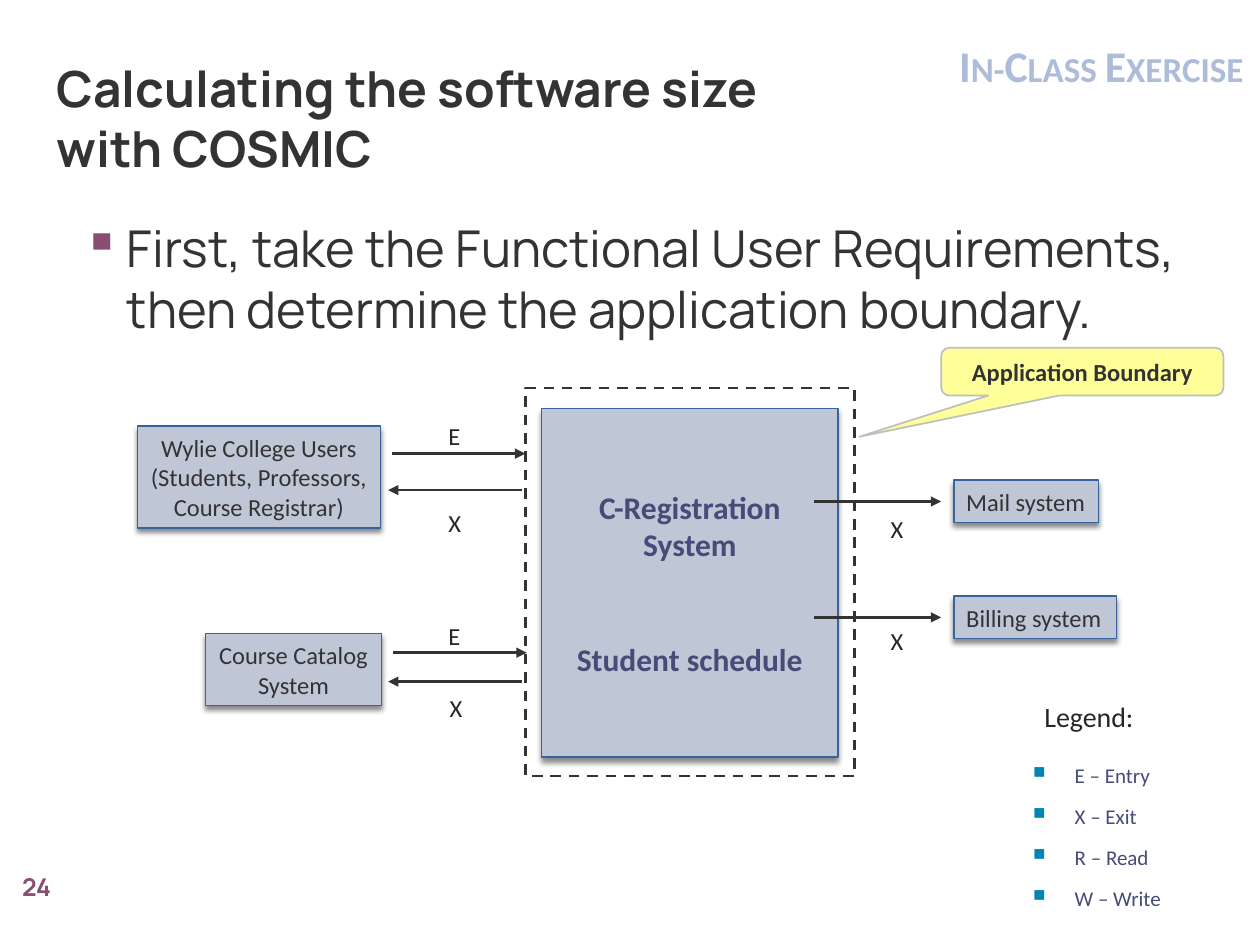
from dataclasses import dataclass

from lxml import etree
from pptx import Presentation, util as u
from pptx.dml.color import RGBColor
from pptx.enum import dml, shapes, text
from pptx.oxml import ns

PX = 9144
CENTER, LEFT, RIGHT = text.PP_ALIGN.CENTER, text.PP_ALIGN.LEFT, text.PP_ALIGN.RIGHT
MIDDLE, TOP = text.MSO_ANCHOR.MIDDLE, text.MSO_ANCHOR.TOP


@dataclass(frozen=True)
class Theme:
    heading: str = "Manrope"
    plain: str = "Calibri"
    ink: str = "333333"
    dark: str = "262626"
    plum: str = "884D72"
    indigo: str = "474B78"
    sky: str = "ADBCDB"
    teal: str = "0084B4"
    panel: str = "BFC6D5"
    edge: str = "39639D"
    yellow: str = "FFFF99"
    silver: str = "BFBFBF"
    title: float = 28.4
    body: float = 29
    banner: float = 25
    system: float = 18
    legend: float = 16
    label: float = 14
    item: float = 12


def px(*values):
    return [u.Emu(value * PX) for value in values]


def child(parent, tag, **attributes):
    return etree.SubElement(parent, ns.qn(tag), {key: str(value) for key, value in attributes.items()})


class Painter:
    def __init__(self, page, theme):
        self.page, self.theme = page, theme

    def set_words(self, shape, words, size, color, font=None, bold=False, align=LEFT,
                  anchor=TOP, wrap=False, grow=False):
        frame = shape.text_frame
        frame.text = words
        frame.word_wrap = wrap
        frame.vertical_anchor = anchor
        frame.auto_size = text.MSO_AUTO_SIZE.SHAPE_TO_FIT_TEXT if grow else text.MSO_AUTO_SIZE.NONE
        for para in frame.paragraphs:
            para.alignment = align
            for span in para.runs:
                span.font.name = font or self.theme.plain
                span.font.size = u.Pt(size)
                span.font.bold = bold
                span.font.color.rgb = RGBColor.from_string(color)
        return frame

    def label(self, at, words, size, color, **style):
        return self.set_words(self.page.shapes.add_textbox(*px(*at)), words, size, color, **style)

    def bullets(self, frame, mark, color, indent, percent=100, gap=0):
        for index, para in enumerate(frame.paragraphs):
            if index:
                para.space_before = u.Pt(gap)
            properties = para._p.get_or_add_pPr()
            properties.set("marL", str(indent * PX))
            properties.set("indent", str(-indent * PX))
            child(child(properties, "a:buClr"), "a:srgbClr", val=color)
            child(properties, "a:buSzPct", val=percent * 1000)
            child(properties, "a:buChar", char=mark)

    def shape(self, kind, at, fill, line, width):
        shape = self.page.shapes.add_shape(kind, *px(*at))
        shape.shadow.inherit = False
        if fill:
            shape.fill.solid()
            shape.fill.fore_color.rgb = RGBColor.from_string(fill)
        else:
            shape.fill.background()
        shape.line.color.rgb = RGBColor.from_string(line)
        shape.line.width = u.Pt(width)
        return shape

    def system(self, at, words, size, color, **style):
        box = self.shape(shapes.MSO_SHAPE.RECTANGLE, at, self.theme.panel, self.theme.edge, 0.79)
        effects = box._element.spPr.find(ns.qn("a:effectLst"))
        shadow = child(effects, "a:outerShdw", blurRad=u.Pt(3), dist=u.Pt(2.4),
                       dir=5400000, rotWithShape=0)
        child(child(shadow, "a:srgbClr", val="000000"), "a:alpha", val=45000)
        return self.set_words(box, words, size, color, anchor=MIDDLE, **style)

    def boundary(self, at):
        box = self.shape(shapes.MSO_SHAPE.RECTANGLE, at, None, self.theme.ink, 1.5)
        box.line.dash_style = dml.MSO_LINE.DASH

    def callout(self, at, words, adjustments):
        box = self.shape(shapes.MSO_SHAPE.ROUNDED_RECTANGULAR_CALLOUT, at,
                         self.theme.yellow, self.theme.silver, 1)
        for index, value in enumerate(adjustments):
            box.adjustments[index] = value
        self.set_words(box, words, self.theme.label, self.theme.ink, bold=True,
                       align=CENTER, anchor=MIDDLE)

    def arrow(self, start, end, y):
        line = self.page.shapes.add_connector(shapes.MSO_CONNECTOR.STRAIGHT, *px(start, y, end, y))
        line.line.color.rgb = RGBColor.from_string(self.theme.ink)
        line.line.width = u.Pt(1.5)
        child(line.line._get_or_add_ln(), "a:tailEnd", type="triangle")
        child(line._element.spPr, "a:effectLst")


def main():
    deck = Presentation()
    deck.slide_width, deck.slide_height = px(1000, 750)
    theme = Theme()
    painter = Painter(deck.slides.add_slide(deck.slide_layouts[6]), theme)

    painter.label((0, 683, 58, 42), "24", theme.label, theme.plum, font=theme.heading,
                  bold=True, align=CENTER, anchor=MIDDLE, wrap=True)
    painter.label((35, 41, 622, 107), "Calculating the software size\vwith COSMIC", theme.title,
                  theme.ink, font=theme.heading, bold=True, wrap=True)
    body = painter.label((56, 167, 954, 467),
                         "First, take the Functional User Requirements, then determine the application boundary.",
                         theme.body, theme.ink, font=theme.heading, wrap=True)
    painter.bullets(body, "▪", theme.plum, 35)

    core = painter.system((430, 324, 235, 277), "C-Registration\nSystem\nStudent schedule",
                          theme.system, theme.indigo, bold=True, align=CENTER)
    core.paragraphs[-1].space_before = u.Pt(44)
    painter.boundary((417, 308, 261, 308))

    for at, words, align in (
        ((757, 381, 115, 34), "Mail system", LEFT),
        ((757, 473, 129, 34), "Billing system", LEFT),
        ((163, 503, 140, 57), "Course Catalog\nSystem", CENTER),
        ((109, 338, 193, 81), "Wylie College Users\n(Students, Professors,\nCourse Registrar)", CENTER),
    ):
        painter.system(at, words, theme.label, theme.ink, align=align, grow=True)

    for start, end, y in (
        (646, 747, 398), (646, 747, 490),
        (311, 417, 360), (414, 308, 389),
        (414, 308, 541), (312, 418, 518),
    ):
        painter.arrow(start, end, y)

    painter.callout((747, 276, 224, 38), "Application Boundary", (-0.79, 1.36, 0.17))

    banner = painter.label((745, 26, 252, 52), "In-Class Exercise", theme.banner, theme.sky,
                           bold=True, align=RIGHT, grow=True)
    banner.paragraphs[0].runs[0].font._element.set("cap", "small")

    legend = painter.label((809, 600, 134, 131), "E – Entry\nX – Exit\nR – Read\nW – Write",
                           theme.item, theme.indigo, wrap=True)
    legend.margin_left, legend.margin_right = px(11, 11)
    painter.bullets(legend, "■", theme.teal, 33, percent=80, gap=9)
    painter.label((819, 550, 107, 37), "Legend:", theme.legend, theme.dark, wrap=True, grow=True)

    for letter, left, top in (
        ("E", 346, 329), ("E", 346, 488), ("X", 346, 398),
        ("X", 347, 545), ("X", 697, 403), ("X", 697, 492),
    ):
        painter.label((left, top, 30, 34), letter, theme.label, theme.dark, grow=True)

    deck.save("out.pptx")


if __name__ == "__main__":
    main()
